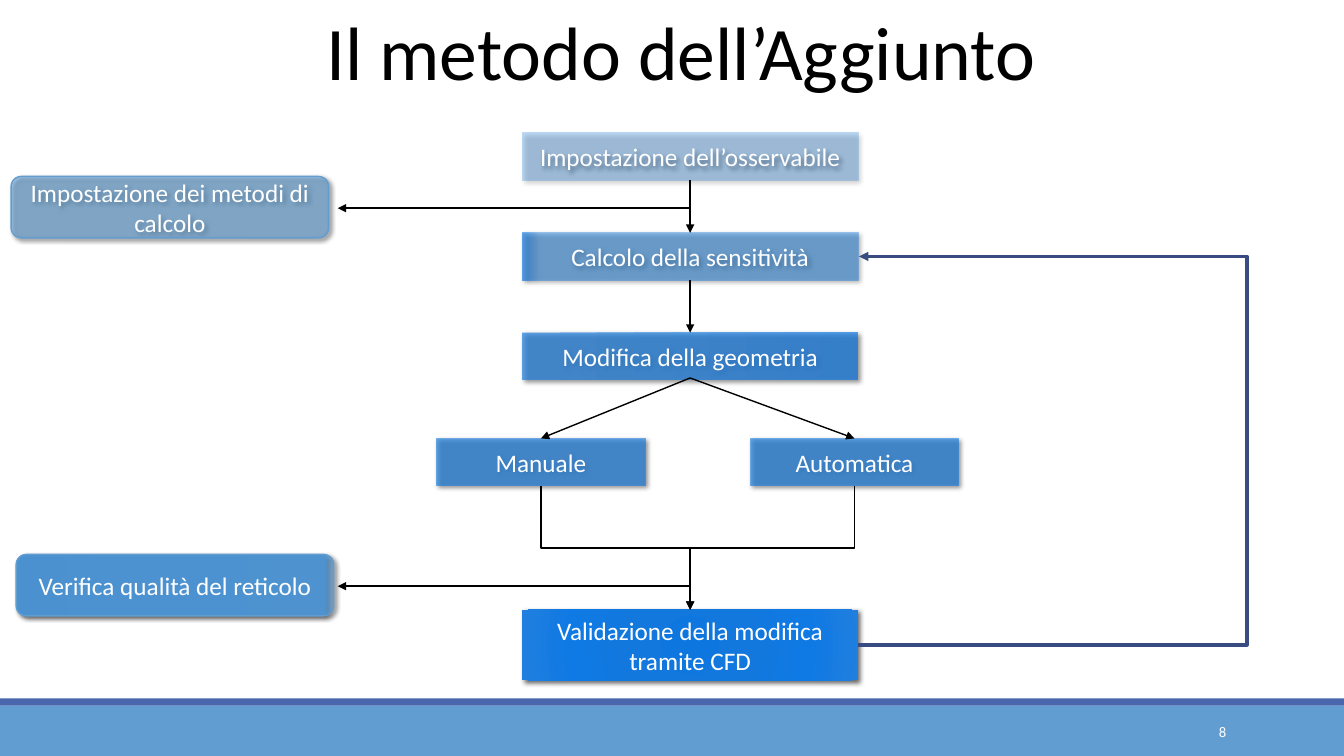
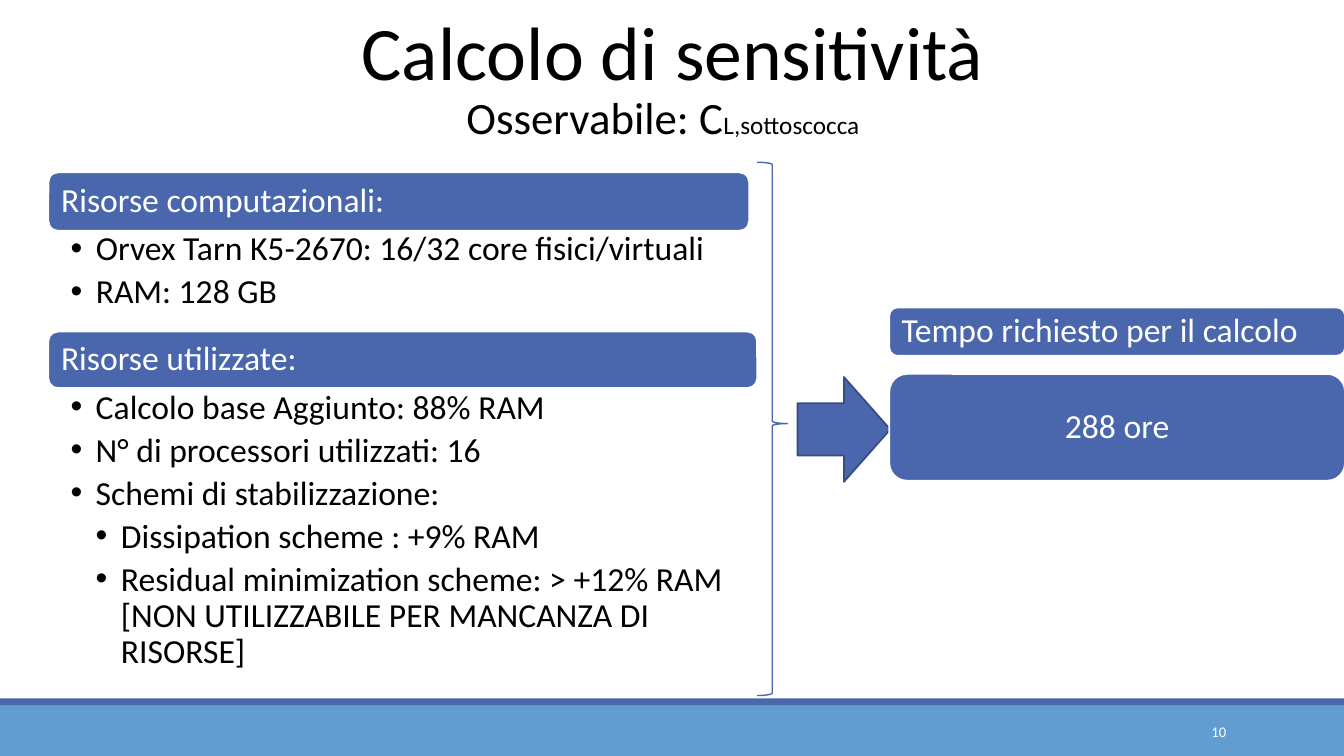
from dataclasses import dataclass

from lxml import etree
from pptx import Presentation
from pptx import util as u
from pptx.dml.color import RGBColor
from pptx.enum import shapes, text
from pptx.oxml import ns

SKY = RGBColor(0x62, 0x9D, 0xD1)
INDIGO = RGBColor(0x4A, 0x66, 0xAC)
NAVY = RGBColor(0x38, 0x4C, 0x81)
AZURE = RGBColor(0x0E, 0x76, 0xDF)
BLUE = RGBColor(0x20, 0x7F, 0xDE)
MID_BLUE = RGBColor(0x12, 0x78, 0xDD)
BRIGHT_BLUE = RGBColor(0x0F, 0x79, 0xE4)
STEEL = RGBColor(0x4C, 0x93, 0xD2)
STEEL_MID = RGBColor(0x4F, 0x95, 0xD2)
STEEL_LIGHT = RGBColor(0x4E, 0x97, 0xD8)
BLACK = RGBColor(0, 0, 0)
WHITE = RGBColor(0xFF, 0xFF, 0xFF)

FONT = "Calibri"
WIDTH, HEIGHT = 13.33, 7.5
SHAPE = shapes.MSO_SHAPE
LEFT, CENTER, RIGHT = text.PP_ALIGN.LEFT, text.PP_ALIGN.CENTER, text.PP_ALIGN.RIGHT
MIDDLE = text.MSO_ANCHOR.MIDDLE


@dataclass
class Box:
    left: float
    top: float
    width: float
    height: float

    @property
    def center(self):
        return self.left + self.width / 2

    @property
    def middle(self):
        return self.top + self.height / 2

    @property
    def right(self):
        return self.left + self.width

    @property
    def bottom(self):
        return self.top + self.height

    def inches(self):
        return [u.Inches(side) for side in (self.left, self.top, self.width, self.height)]


def child(parent, tag, **attributes):
    element = etree.SubElement(parent, ns.qn(tag))
    for name, value in attributes.items():
        element.set(name, str(value))
    return element


def style(para, size, color, align=LEFT):
    para.alignment = align
    para.font.name = FONT
    para.font.size = u.Pt(size)
    para.font.color.rgb = color


def add_text(page, box, words, size, color=BLACK, align=CENTER, anchor=text.MSO_ANCHOR.TOP):
    frame = page.shapes.add_textbox(*box.inches()).text_frame
    frame.word_wrap = True
    frame.vertical_anchor = anchor
    para = frame.paragraphs[0]
    para.text = words
    style(para, size, color, align)
    return para


def add_shape(page, box, preset=SHAPE.RECTANGLE, fill=None, line=None, weight=1):
    shape = page.shapes.add_shape(preset, *box.inches())
    shape.shadow.inherit = False
    if fill is None:
        shape.fill.background()
    else:
        shape.fill.solid()
        shape.fill.fore_color.rgb = fill
    if line is None:
        shape.line.fill.background()
    else:
        shape.line.color.rgb = line
        shape.line.width = u.Pt(weight)
    return shape


def label(shape, words, size, align=CENTER):
    frame = shape.text_frame
    frame.word_wrap = True
    frame.vertical_anchor = MIDDLE
    para = frame.paragraphs[0]
    para.text = words
    style(para, size, WHITE, align)
    return para


def set_gradient(shape, stops, radial=False):
    """Fill with stops of (position %, colour, opacity %)."""
    shape.fill.gradient()
    gradient = shape._element.spPr.find(ns.qn("a:gradFill"))
    gradient.clear()
    stop_list = child(gradient, "a:gsLst")
    for position, color, opacity in stops:
        stop = child(stop_list, "a:gs", pos=position * 1000)
        child(child(stop, "a:srgbClr", val=color), "a:alpha", val=opacity * 1000)
    if radial:
        circle = child(gradient, "a:path", path="circle")
        child(circle, "a:fillToRect", **dict.fromkeys("ltrb", 100000))
    else:
        child(gradient, "a:lin", ang=0, scaled=0)


def set_shadow(shape, blur):
    effects = shape._element.spPr.find(ns.qn("a:effectLst"))
    shadow = child(effects, "a:outerShdw", blurRad=u.Pt(blur), dist=u.Pt(2),
                   dir=45 * 60000, algn="tl", rotWithShape=0)
    child(child(shadow, "a:srgbClr", val=BLACK), "a:alpha", val=60000)


def add_step(page, box, words, stops, radial=False, rounded=False):
    """Glossy flow-chart box; side notes are rounded and outlined."""
    preset, line, blur = (SHAPE.ROUNDED_RECTANGLE, SKY, 3) if rounded else (SHAPE.RECTANGLE, None, 3.5)
    shape = add_shape(page, box, preset, AZURE, line)
    set_gradient(shape, stops, radial)
    set_shadow(shape, blur)
    label(shape, words, 18)


def add_arrow(page, start, end, color=BLACK, weight=1, kind=shapes.MSO_CONNECTOR.STRAIGHT):
    arrow = page.shapes.add_connector(kind, *[u.Inches(value) for value in (*start, *end)])
    arrow.line.color.rgb = color
    arrow.line.width = u.Pt(weight)
    properties = arrow._element.spPr
    child(properties.find(ns.qn("a:ln")), "a:tailEnd", type="triangle")
    child(properties, "a:effectLst")
    return properties


def add_drop_arrow(page, start, end):
    """Elbow that leaves downwards, crosses halfway and arrives downwards."""
    (x1, y1), (x2, y2) = start, end
    x, y = (x1 + x2) / 2, (y1 + y2) / 2
    half_run, half_rise = (y2 - y1) / 2, abs(x2 - x1) / 2
    turn = 90
    if x2 > x1:
        turn, half_run = 270, -half_run
    properties = add_arrow(page, (x - half_run, y - half_rise), (x + half_run, y + half_rise),
                           kind=shapes.MSO_CONNECTOR.ELBOW)
    properties.find(ns.qn("a:xfrm")).set("rot", str(turn * 60000))


def add_return_arrow(page, start, end, reach):
    """Elbow that runs out to the right as far as reach and comes back."""
    properties = add_arrow(page, start, end, NAVY, 2.25, shapes.MSO_CONNECTOR.ELBOW)
    share = (reach - start[0]) / (end[0] - start[0])
    guides = properties.find(ns.qn("a:prstGeom")).get_or_add_avLst()
    child(guides, "a:gd", name="adj1", fmla=f"val {round(share * 100000)}")


def add_page(deck, title, title_box, number):
    page = deck.slides.add_slide(deck.slide_layouts[6])
    add_shape(page, Box(0, 7, WIDTH, 0.5), fill=SKY)
    add_shape(page, Box(0, 6.93, WIDTH, 0.07), fill=INDIGO)
    add_text(page, title_box, title, 54)
    add_text(page, Box(10.83, 7.06, 1.43, 0.4), number, 10.5, WHITE, RIGHT, MIDDLE)
    return page


def add_flow(page, area):
    row, step_height, step_width = 0.99, 0.47, 3.33
    steps = [Box(area.left + 5.18, area.top + row * index, step_width, step_height)
             for index in range(3)]
    observable, sensitivity, geometry = steps
    manual, automatic = [Box(area.left + x, area.top + 3.03, 2.07, step_height) for x in (4.33, 7.44)]
    check = Box(observable.left, area.bottom - 0.7, step_width, 0.7)
    axis = observable.center

    add_step(page, observable, "Impostazione dell’osservabile", [(0, AZURE, 50), (0, BLUE, 30)])
    add_step(page, sensitivity, "Calcolo della sensitività", [(0, AZURE, 70), (5, BLUE, 50)])
    add_step(page, geometry, "Modifica della geometria", [(0, BLUE, 70), (100, AZURE, 70)])
    add_step(page, manual, "Manuale", [(0, AZURE, 70), (0, BLUE, 70)])
    add_step(page, automatic, "Automatica", [(0, AZURE, 90), (0, BLUE, 70)])
    add_step(page, check, "Validazione della modifica tramite CFD",
             [(0, AZURE, 100), (34, MID_BLUE, 100), (70, BRIGHT_BLUE, 100), (100, BLUE, 100)],
             radial=True)

    for upper, lower in zip(steps, steps[1:]):
        add_arrow(page, (axis, upper.bottom), (axis, lower.top))
    for branch in (manual, automatic):
        add_arrow(page, (axis, geometry.bottom - 0.02), (branch.center, branch.top))
        add_drop_arrow(page, (branch.center, branch.bottom), (axis, check.top))
    add_return_arrow(page, (check.right, check.middle),
                     (sensitivity.right + 0.01, sensitivity.middle), area.right)

    notes = [
        (Box(area.left + 0.11, area.top + 0.43, 3.15, 0.61), "Impostazione dei metodi di calcolo", 0),
        (Box(area.left + 0.16, area.top + 4.18, 3.15, 0.61), "Verifica qualità del reticolo", 97),
    ]
    for box, words, middle_stop in notes:
        last_stop = middle_stop and middle_stop + 2
        add_step(page, box, words, [(0, STEEL, 100), (middle_stop, STEEL_MID, 100),
                                    (last_stop, STEEL_LIGHT, 50)], rounded=True)
        add_arrow(page, (axis, box.middle + 0.01), (area.left + 3.35, box.middle + 0.01))


def add_panel(page, box, words, align=LEFT):
    panel = add_shape(page, box, SHAPE.ROUNDED_RECTANGLE, INDIGO, WHITE, 1.25)
    label(panel, words, 24, align).line_spacing = 0.9


def add_bullets(page, box, items):
    """List of (level, words), each level a quarter inch further in."""
    frame = page.shapes.add_textbox(*box.inches()).text_frame
    frame.word_wrap = True
    frame.margin_left, frame.margin_right = u.Inches(0.22), u.Inches(0.19)
    frame.margin_top = frame.margin_bottom = u.Inches(0.03)
    for index, (level, words) in enumerate(items):
        para = frame.add_paragraph() if index else frame.paragraphs[0]
        para.text = words
        para.level = level
        para.line_spacing = 0.9
        para.space_after = u.Pt(4.8)
        properties = para._p.get_or_add_pPr()
        properties.set("marL", str(u.Inches(0.25 * level)))
        properties.set("indent", str(u.Inches(-0.25)))
        child(properties, "a:buFont", typeface="Arial")
        child(properties, "a:buChar", char="•")
        style(para, 24, BLACK)


def add_resources(page, area):
    add_panel(page, Box(area.left, area.top, area.width - 0.08, 0.58), "Risorse computazionali:")
    add_bullets(page, Box(area.left, area.top + 0.56, area.width - 0.08, 1.14), [
        (1, "Orvex Tarn K5-2670: 16/32 core fisici/virtuali"),
        (1, "RAM: 128 GB"),
    ])
    add_panel(page, Box(area.left, area.top + 1.58, area.width, 0.56), "Risorse utilizzate:")
    add_bullets(page, Box(area.left, area.top + 2.13, area.width, 3.21), [
        (1, "Calcolo base Aggiunto: 88% RAM"),
        (1, "N° di processori utilizzati: 16"),
        (1, "Schemi di stabilizzazione:"),
        (2, "Dissipation scheme : +9% RAM"),
        (2, "Residual minimization scheme: > +12% RAM [NON UTILIZZABILE PER MANCANZA DI RISORSE]"),
    ])
    brace = add_shape(page, Box(area.right, area.top - 0.1, 0.3, 5.29), SHAPE.RIGHT_BRACE, line=INDIGO)
    brace.adjustments[0], brace.adjustments[1] = 0.08, 0.49


def add_duration(page, area):
    add_shape(page, Box(area.left - 0.91, area.top + 0.69, 0.92, 1.04),
              SHAPE.RIGHT_ARROW, INDIGO, NAVY, 1.25)
    add_panel(page, Box(area.left, area.top, area.width, 0.48), "Tempo richiesto per il calcolo")
    add_panel(page, Box(area.left, area.bottom - 1.06, area.width, 1.06), "288 ore", CENTER)


def main():
    deck = Presentation()
    deck.slide_width, deck.slide_height = u.Inches(WIDTH), u.Inches(HEIGHT)

    method = add_page(deck, "Il metodo dell’Aggiunto", Box(2.72, 0, 8.07, 1.01), "8")
    add_flow(method, Box(0, 1.32, 12.43, 5.43))

    sensitivity = add_page(deck, "Calcolo di sensitività", Box(0.08, 0, 13.18, 1.01), "10")
    subtitle = add_text(sensitivity, Box(4.19, 0.84, 4.77, 0.64), "Osservabile: C", 32)
    span = subtitle.add_run()
    span.text = "L,sottoscocca"
    span.font.size = u.Pt(18)
    add_resources(sensitivity, Box(0.48, 1.71, 7.03, 5.34))
    add_duration(sensitivity, Box(8.82, 3.05, 4.52, 1.72))

    deck.save("out.pptx")


if __name__ == "__main__":
    main()
